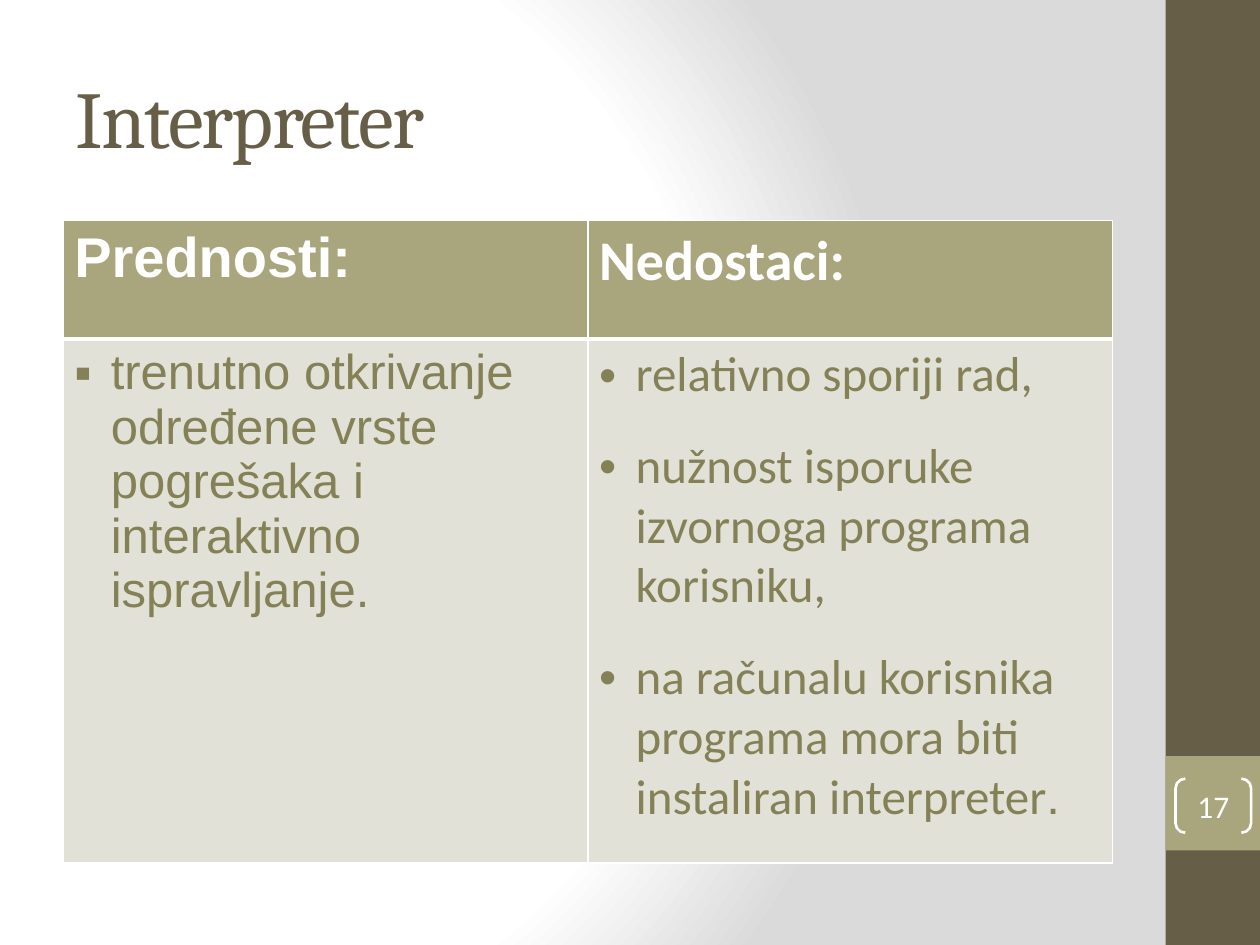
import pptx
import pptx.dml.color
import pptx.enum.shapes
import pptx.enum.text
import pptx.oxml
import pptx.oxml.ns
import pptx.util
from lxml import etree

SHAPES = pptx.enum.shapes.MSO_SHAPE
NAMESPACE = pptx.oxml.ns.nsdecls("a")
WHITE, BROWN, OLIVE, MOSS, SAND = "FFFFFF", "675E47", "A9A57C", "858157", "E2E1D7"


def color(code):
    return pptx.dml.color.RGBColor.from_string(code)


def assign(target, values):
    for name, value in values.items():
        setattr(target, name, value)


class Deck:
    COLUMNS, ROWS = 40, 30
    EDGES = ("lnL", "lnR", "lnT", "lnB")

    def __init__(self, width, height):
        self.deck = pptx.Presentation()
        self.deck.slide_width = pptx.util.Inches(width)
        self.deck.slide_height = pptx.util.Inches(height)
        self.page = self.deck.slides.add_slide(self.deck.slide_layouts[6])

    def across(self, columns):
        return round(self.deck.slide_width * columns / self.COLUMNS)

    def down(self, rows):
        return round(self.deck.slide_height * rows / self.ROWS)

    def area(self, left, top, width, height):
        return self.across(left), self.down(top), self.across(width), self.down(height)

    def background(self, stops, focus):
        self.page.background.fill.solid()
        holder = self.page.element.find(".//" + pptx.oxml.ns.qn("p:bgPr"))
        colors = "".join(
            f'<a:gs pos="{place * 1000}"><a:srgbClr val="{code}"/></a:gs>'
            for place, code in stops
        )
        sides = " ".join(f'{side}="{share * 1000}"' for side, share in zip("ltrb", focus))
        gradient = pptx.oxml.parse_xml(
            f'<a:gradFill {NAMESPACE} rotWithShape="1"><a:gsLst>{colors}</a:gsLst>'
            f'<a:path path="circle"><a:fillToRect {sides}/></a:path></a:gradFill>'
        )
        holder.replace(holder[0], gradient)

    def add_span(self, para, text, font, size, code, bold=False, spacing=None):
        span = para.add_run()
        span.text = text
        assign(span.font, {"name": font, "size": pptx.util.Pt(size), "bold": bold})
        span.font.color.rgb = color(code)
        if spacing is not None:
            span.font._element.set("spc", str(spacing * 100))

    def frame(self, box, margin):
        frame = box.text_frame
        side, end = (pptx.util.Inches(length) for length in margin)
        assign(frame, {
            "word_wrap": True,
            "vertical_anchor": pptx.enum.text.MSO_ANCHOR.MIDDLE,
            "margin_left": side, "margin_right": side,
            "margin_top": end, "margin_bottom": end,
        })
        return frame.paragraphs[0]

    def title(self, place, text):
        box = self.page.shapes.add_textbox(*self.area(*place))
        self.add_span(self.frame(box, (0.1, 0.05)), text, "Cambria", 46, BROWN, spacing=-1)

    def panel(self, place, code):
        box = self.page.shapes.add_shape(SHAPES.RECTANGLE, *self.area(*place))
        box.shadow.inherit = False
        box.fill.solid()
        box.fill.fore_color.rgb = color(code)
        box.line.fill.background()

    def number(self, place, text):
        box = self.page.shapes.add_shape(SHAPES.DOUBLE_BRACKET, *self.area(*place))
        box.shadow.inherit = False
        box.adjustments[0] = 0.18
        box.fill.background()
        box.line.color.rgb = color(WHITE)
        box.line.width = pptx.util.Pt(1.5)
        para = self.frame(box, (0, 0))
        para.alignment = pptx.enum.text.PP_ALIGN.CENTER
        self.add_span(para, text, "Calibri", 18, WHITE)

    def table(self, place, heights, columns):
        grid = self.page.shapes.add_table(2, len(columns), *self.area(*place)).table
        for row, height in zip(grid.rows, heights):
            row.height = self.down(height)
        for index, (heading, font, bullet, after, items) in enumerate(columns):
            head, body = grid.cell(0, index), grid.cell(1, index)
            self.cell(head, OLIVE, (1, 1, 1, 3))
            self.cell(body, SAND, (1, 1, 3, 1))
            self.add_span(head.text_frame.paragraphs[0], heading, font, 32, WHITE, bold=True)
            for order, spans in enumerate(items):
                frame = body.text_frame
                para = frame.add_paragraph() if order else frame.paragraphs[0]
                para.space_after = pptx.util.Pt(after)
                self.bullet(para, bullet)
                for text, face in spans:
                    self.add_span(para, text, face, 28, MOSS)

    def cell(self, cell, code, widths):
        side, end = pptx.util.Inches(0.09), pptx.util.Inches(0.05)
        assign(cell, {"margin_left": side, "margin_right": side,
                      "margin_top": end, "margin_bottom": end})
        holder = cell._tc.get_or_add_tcPr()
        for edge, width in zip(self.EDGES, widths):
            holder.append(pptx.oxml.parse_xml(
                f'<a:{edge} {NAMESPACE} w="{pptx.util.Pt(width)}"><a:solidFill>'
                f'<a:srgbClr val="{WHITE}"/></a:solidFill></a:{edge}>'
            ))
        cell.fill.solid()
        cell.fill.fore_color.rgb = color(code)

    def bullet(self, para, mark):
        holder = para._p.get_or_add_pPr()
        indent = pptx.util.Inches(0.29)
        holder.set("marL", str(indent))
        holder.set("indent", str(-indent))
        tint = etree.SubElement(holder, pptx.oxml.ns.qn("a:buClr"))
        etree.SubElement(tint, pptx.oxml.ns.qn("a:srgbClr"), val=MOSS)
        etree.SubElement(holder, pptx.oxml.ns.qn("a:buFont"), typeface="Arial")
        etree.SubElement(holder, pptx.oxml.ns.qn("a:buChar"), char=mark)


def main():
    slide = Deck(10, 7.5)
    slide.background([(0, WHITE), (75, WHITE), (100, "DADADA")], (20, 50, 100, 50))
    slide.panel((37, 0, 3, 30), BROWN)
    slide.panel((37, 24, 3, 3), OLIVE)
    slide.title((2, 1.2, 33.32, 5), "Interpreter")
    slide.table((2, 7, 33.32, 20.4), (3.76, 16.64), [
        ("Prednosti:", "Arial", "▪", 0, [
            [("trenutno otkrivanje određene vrste pogrešaka i interaktivno ispravljanje.",
              "Arial")],
        ]),
        ("Nedostaci:", "Calibri", "•", 18, [
            [("relativno sporiji rad,", "Calibri")],
            [("nužnost isporuke izvornoga programa korisniku,", "Calibri")],
            [("na računalu korisnika programa mora biti instaliran interpreter", "Calibri"),
             (".", "Arial")],
        ]),
    ])
    slide.number((37.32, 24.72, 2.4, 1.72), "17")
    slide.deck.save("out.pptx")


if __name__ == "__main__":
    main()
